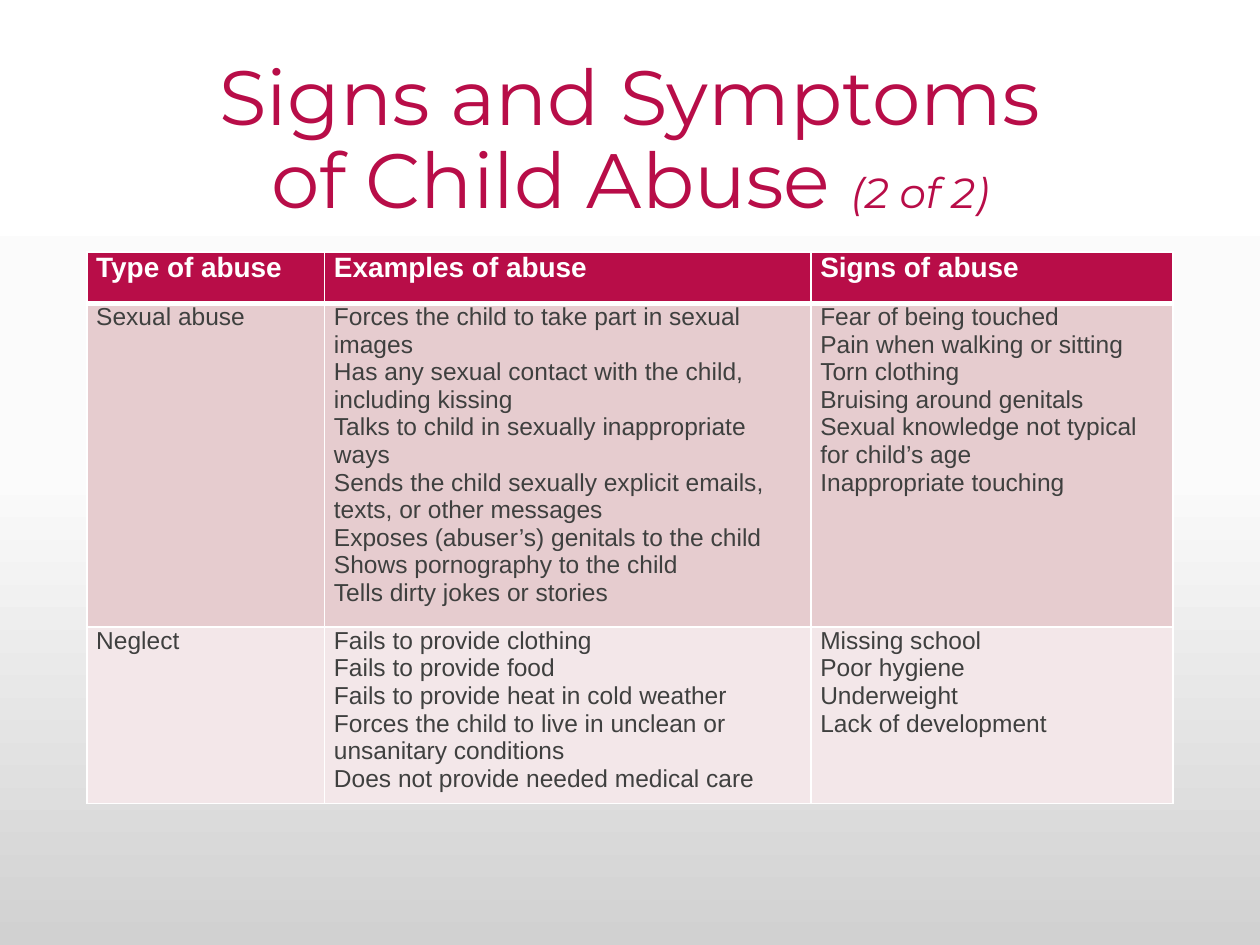
from copy import deepcopy

from lxml import etree
from pptx import Presentation
from pptx.dml.color import RGBColor
from pptx.enum.text import MSO_ANCHOR, PP_ALIGN
from pptx.oxml.ns import qn
from pptx.util import Cm, Pt

CENTER = PP_ALIGN.CENTER
MIDDLE = MSO_ANCHOR.MIDDLE
CRIMSON, WHITE, CHARCOAL = "B80D48", "FFFFFF", "3F403F"
ROW_FILLS = [CRIMSON, "E6CCCF", "F3E7E9"]
BACKGROUND = [(0, WHITE), (0.5, "FBFBFB"), (1, "D1D1D1")]

TITLE = {"name": "Montserrat", "size": Pt(44), "color": CRIMSON}
PART = {**TITLE, "size": Pt(24), "italic": True}
HEADING = {"name": "Arial", "size": Pt(16), "bold": True, "color": WHITE}
BODY = {"name": "Arial", "size": Pt(14), "bold": False, "color": CHARCOAL}
CELL_MARGINS = {"margin_left": Cm(0.19), "margin_right": Cm(0.19),
                "margin_top": 0, "margin_bottom": 0}

COLUMN_WIDTHS = [4.79, 9.8, 7.3]
ROW_HEIGHTS = [1.04, 6.07, 3.33]
ABUSE_ROWS = [
    [["Type of abuse"], ["Examples of abuse"], ["Signs of abuse"]],
    [["Sexual abuse"],
     ["Forces the child to take part in sexual images",
      "Has any sexual contact with the child, including kissing",
      "Talks to child in sexually inappropriate ways",
      "Sends the child sexually explicit emails, texts, or other messages",
      "Exposes (abuser’s) genitals to the child",
      "Shows pornography to the child",
      "Tells dirty jokes or stories"],
     ["Fear of being touched",
      "Pain when walking or sitting",
      "Torn clothing",
      "Bruising around genitals",
      "Sexual knowledge not typical for child’s age",
      "Inappropriate touching"]],
    [["Neglect"],
     ["Fails to provide clothing",
      "Fails to provide food",
      "Fails to provide heat in cold weather",
      "Forces the child to live in unclean or unsanitary conditions",
      "Does not provide needed medical care"],
     ["Missing school", "Poor hygiene", "Underweight", "Lack of development"]],
]


def rgb(value):
    return RGBColor.from_string(value)


def set_attributes(target, values):
    for key, value in values.items():
        setattr(target, key, value)


def add_words(paragraph, words, style):
    run = paragraph.add_run()
    run.text = words
    for key, value in style.items():
        if key == "color":
            run.font.color.rgb = rgb(value)
        else:
            setattr(run.font, key, value)


def paint_background(slide):
    fill = slide.background.fill
    fill.gradient()
    fill.gradient_angle = 270
    first_stop = next(slide.element.iter(qn("a:gs")))
    first_stop.addnext(deepcopy(first_stop))
    for stop, (position, color) in zip(fill.gradient_stops, BACKGROUND):
        stop.position = position
        stop.color.rgb = rgb(color)


def add_title(slide, left, top, width, height):
    frame = slide.shapes.add_textbox(Cm(left), Cm(top), Cm(width), Cm(height)).text_frame
    set_attributes(frame, {"word_wrap": True, "vertical_anchor": MIDDLE})
    heading = frame.paragraphs[0]
    set_attributes(heading, {"alignment": CENTER, "line_spacing": 0.9})
    add_words(heading, "Signs and Symptoms", TITLE)
    heading.add_line_break()
    add_words(heading, "of Child Abuse ", TITLE)
    add_words(heading, "(2 of 2)", PART)


def add_borders(cell, bottom_width):
    properties = cell._tc.get_or_add_tcPr()
    widths = {"lnL": 1, "lnR": 1, "lnT": 1, "lnB": bottom_width}
    for index, (side, width) in enumerate(widths.items()):
        border = etree.Element(qn(f"a:{side}"), w=str(Pt(width)))
        paint = etree.SubElement(border, qn("a:solidFill"))
        etree.SubElement(paint, qn("a:srgbClr"), val=WHITE)
        properties.insert(index, border)


def fill_cell(cell, lines, fill, style, bottom_width):
    set_attributes(cell, CELL_MARGINS)
    cell.fill.solid()
    cell.fill.fore_color.rgb = rgb(fill)
    add_borders(cell, bottom_width)
    frame = cell.text_frame
    for index, line in enumerate(lines):
        paragraph = frame.add_paragraph() if index else frame.paragraphs[0]
        add_words(paragraph, line, style)


def add_abuse_table(slide, left, top, width, height):
    table = slide.shapes.add_table(len(ABUSE_ROWS), len(COLUMN_WIDTHS), Cm(left),
                                   Cm(top), Cm(width), Cm(height)).table
    for column, share in zip(table.columns, COLUMN_WIDTHS):
        column.width = Cm(width * share / sum(COLUMN_WIDTHS))
    for row, share in zip(table.rows, ROW_HEIGHTS):
        row.height = Cm(height * share / sum(ROW_HEIGHTS))
    for index, (row, entries) in enumerate(zip(table.rows, ABUSE_ROWS)):
        style, bottom_width = (BODY, 1) if index else (HEADING, 3)
        for cell, lines in zip(row.cells, entries):
            fill_cell(cell, lines, ROW_FILLS[index], style, bottom_width)


def main():
    deck = Presentation()
    set_attributes(deck, {"slide_width": Cm(25.4), "slide_height": Cm(19.05)})
    slide = deck.slides.add_slide(deck.slide_layouts[6])
    paint_background(slide)
    add_title(slide, 1.75, 1.02, 21.9, 3.68)
    add_abuse_table(slide, 1.75, 5.08, 21.9, 10.44)
    deck.save("out.pptx")


if __name__ == "__main__":
    main()
